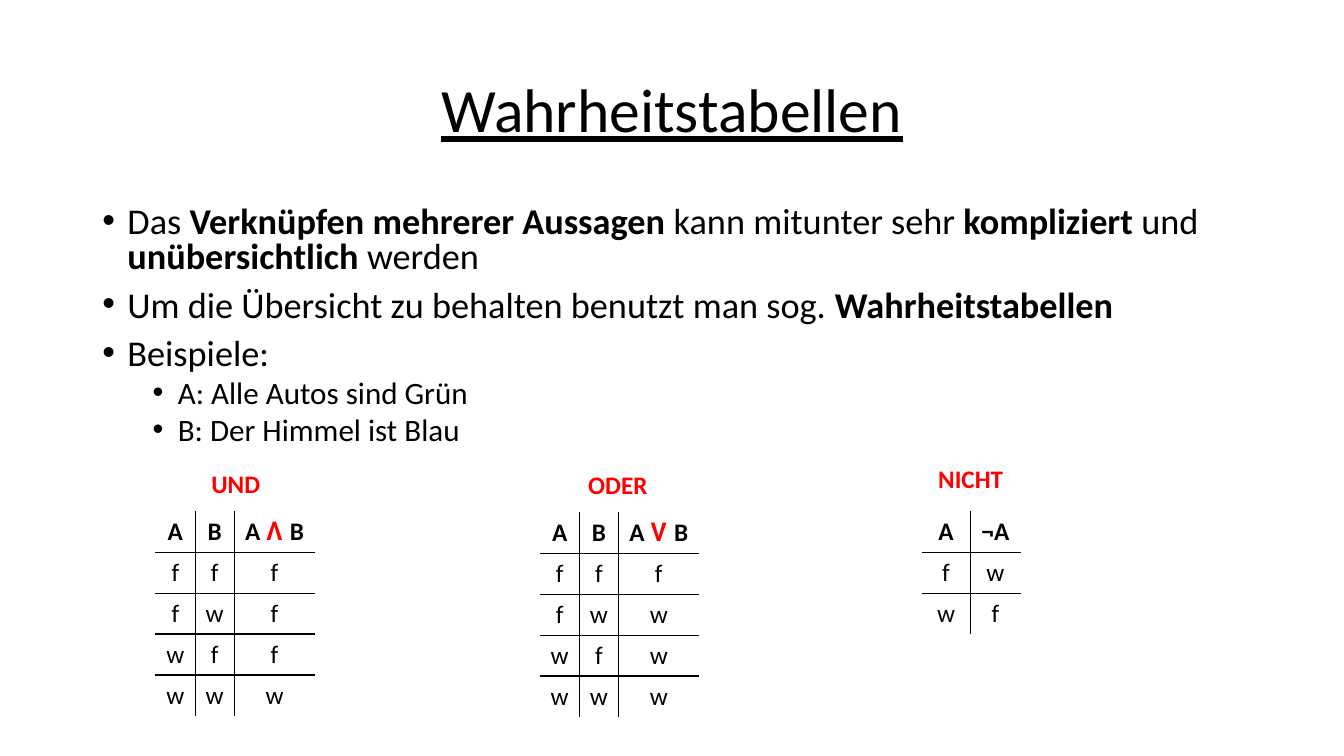
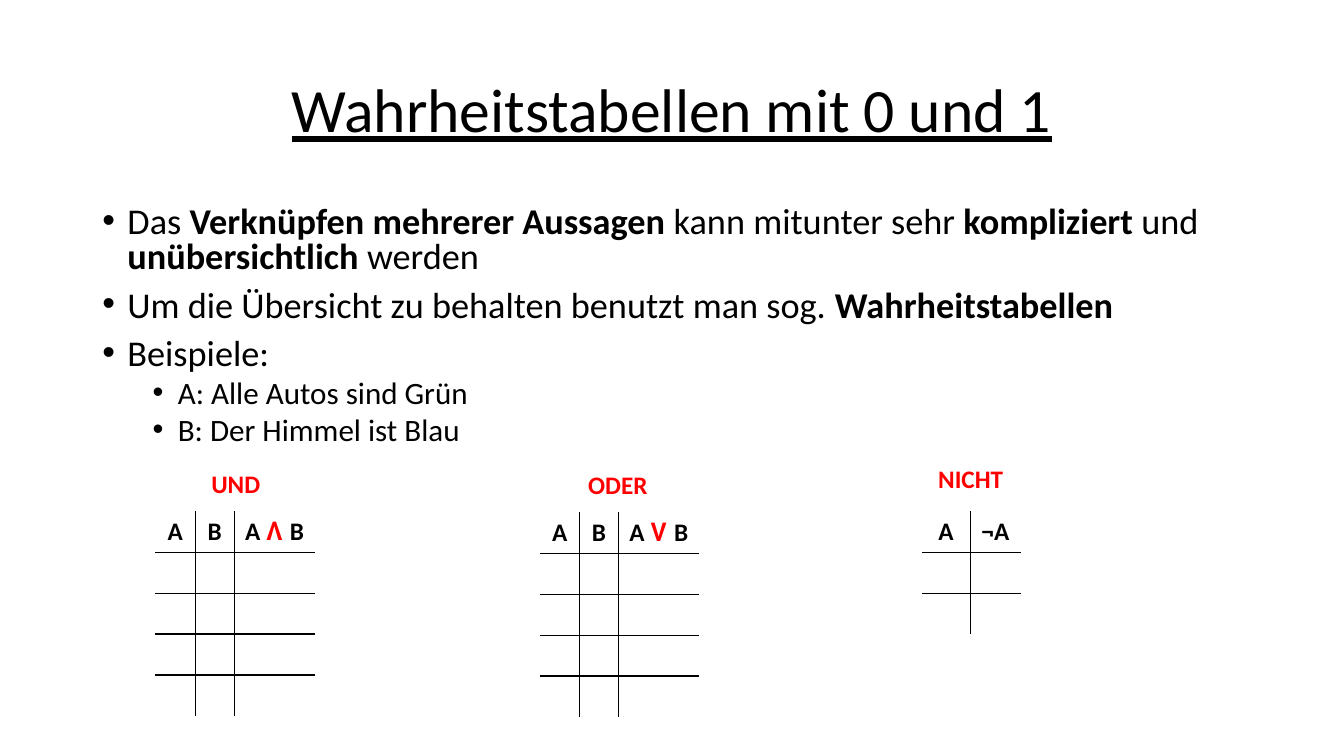
"""Build two slides on truth tables, one filled in and one left blank."""
from dataclasses import dataclass

from lxml import etree
from pptx import Presentation
from pptx.dml.color import RGBColor
from pptx.enum.text import MSO_ANCHOR, MSO_AUTO_SIZE, PP_ALIGN
from pptx.oxml.ns import qn
from pptx.util import Emu, Pt

PX = 9525
BLACK = RGBColor(0x00, 0x00, 0x00)
RED = RGBColor(0xFF, 0x00, 0x00)
FONT = "Calibri"
CENTER = PP_ALIGN.CENTER
MIDDLE = MSO_ANCHOR.MIDDLE
NO_FIT = MSO_AUTO_SIZE.NONE
TITLE_ONLY = 5
ROW_H = 39
LABEL_SIZE = (93, 32)
TABLE_PT = 18


@dataclass(frozen=True)
class Run:
    text: str
    bold: bool = False
    color: RGBColor = BLACK


@dataclass(frozen=True)
class Bullet:
    runs: tuple[Run, ...]
    size: float = 25.9
    indent: int = 24
    before: int = 10


@dataclass(frozen=True)
class TruthTable:
    label: str
    label_at: tuple[int, int]
    at: tuple[int, int]
    cols: tuple[int, ...]
    header: tuple[tuple[Run, ...], ...]
    rows: tuple[str, ...]


def head(text: str) -> tuple[Run, ...]:
    return (Run(text, True),)


def joined(operator: str) -> tuple[Run, ...]:
    return Run("A ", True), Run(operator, True, RED), Run(" B", True)


BULLETS = (
    Bullet((Run("Das "), Run("Verknüpfen mehrerer Aussagen ", True),
            Run("kann mitunter sehr "), Run("kompliziert", True), Run(" und "),
            Run("unübersichtlich", True), Run(" werden"))),
    Bullet((Run("Um die Übersicht zu behalten benutzt man sog. "),
            Run("Wahrheitstabellen", True))),
    Bullet((Run("Beispiele:"),)),
    Bullet((Run("A: Alle Autos sind Grün"),), 22.2, 72, 5),
    Bullet((Run("B: Der Himmel ist Blau"),), 22.2, 72, 5),
)
TABLES = (
    TruthTable("UND", (178, 444), (148, 487), (38, 37, 77),
               (head("A"), head("B"), joined("ꓥ")), ("fff", "fwf", "wff", "www")),
    TruthTable("ODER", (542, 445), (514, 488), (38, 37, 77),
               (head("A"), head("B"), joined("ꓦ")), ("fff", "fww", "wfw", "www")),
    TruthTable("NICHT", (878, 440), (878, 487), (46, 48),
               (head("A"), head("¬A")), ("fw", "wf")),
)


def px(n: int) -> Emu:
    return Emu(n * PX)


def place(sp, x: int, y: int, w: int, h: int) -> None:
    sp.left, sp.top, sp.width, sp.height = map(px, (x, y, w, h))


def write(p, runs: tuple[Run, ...], size: float, align=None, underline: bool = False) -> None:
    p.alignment = align
    for run in runs:
        r = p.add_run()
        r.text = run.text
        r.font.name, r.font.size = FONT, Pt(size)
        r.font.bold = run.bold
        r.font.underline = underline
        r.font.color.rgb = run.color


def add_box(s, x: int, y: int, w: int, h: int):
    tf = s.shapes.add_textbox(*map(px, (x, y, w, h))).text_frame
    tf.word_wrap = True
    tf.auto_size = NO_FIT
    return tf


def add_title(s, text: str) -> None:
    sp = s.shapes.title
    place(sp, 88, 38, 1104, 139)
    tf = sp.text_frame
    tf.vertical_anchor, tf.auto_size = MIDDLE, NO_FIT
    p = tf.paragraphs[0]
    p.line_spacing = 0.9
    write(p, (Run(text),), 44, CENTER, underline=True)


def add_bullets(s, bullets: tuple[Bullet, ...]) -> None:
    tf = add_box(s, 88, 192, 1104, 254)
    for i, bullet in enumerate(bullets):
        p = tf.add_paragraph() if i else tf.paragraphs[0]
        p.line_spacing, p.space_before = 0.8, Pt(bullet.before)
        write(p, bullet.runs, bullet.size)
        p_pr = p._p.get_or_add_pPr()
        p_pr.set("marL", str(px(bullet.indent)))
        p_pr.set("indent", str(px(-24)))
        etree.SubElement(p_pr, qn("a:buFont"), typeface="Arial")
        etree.SubElement(p_pr, qn("a:buChar"), char="•")


def set_border(cell, side: str, visible: bool) -> None:
    ln = etree.SubElement(cell._tc.get_or_add_tcPr(), qn(f"a:ln{side}"), w=str(Pt(1)))
    if visible:
        fill = etree.SubElement(ln, qn("a:solidFill"))
        etree.SubElement(fill, qn("a:srgbClr"), val=str(BLACK))
    else:
        etree.SubElement(ln, qn("a:noFill"))


def add_truth_table(s, spec: TruthTable, filled: bool) -> None:
    tf = add_box(s, *spec.label_at, *LABEL_SIZE)
    tf.vertical_anchor = MIDDLE
    write(tf.paragraphs[0], (Run(spec.label, True, RED),), TABLE_PT, CENTER)

    n_rows, n_cols = len(spec.rows) + 1, len(spec.cols)
    size = (sum(spec.cols), n_rows * ROW_H)
    table = s.shapes.add_table(n_rows, n_cols, *map(px, spec.at + size)).table
    table.first_row = table.horz_banding = False
    for col, width in zip(table.columns, spec.cols):
        col.width = px(width)
    values = [spec.header] + [tuple((Run(v),) for v in row) for row in spec.rows]
    for i, row in enumerate(values):
        table.rows[i].height = px(ROW_H)
        for j, runs in enumerate(row):
            cell = table.cell(i, j)
            cell.margin_left = cell.margin_right = 0
            cell.margin_top = cell.margin_bottom = 0
            cell.vertical_anchor = MIDDLE
            inner = {"L": j > 0, "R": j < n_cols - 1, "T": i > 0, "B": i < n_rows - 1}
            for side, visible in inner.items():
                set_border(cell, side, visible)
            cell.fill.background()
            if filled or i == 0:
                write(cell.text_frame.paragraphs[0], runs, TABLE_PT, CENTER)


def add_slide(prs, title: str, filled: bool) -> None:
    s = prs.slides.add_slide(prs.slide_layouts[TITLE_ONLY])
    add_title(s, title)
    add_bullets(s, BULLETS)
    for spec in TABLES:
        add_truth_table(s, spec, filled)


def main() -> None:
    prs = Presentation()
    prs.slide_width, prs.slide_height = px(1280), px(720)
    add_slide(prs, "Wahrheitstabellen", filled=True)
    add_slide(prs, "Wahrheitstabellen mit 0 und 1", filled=False)
    prs.save("out.pptx")


if __name__ == "__main__":
    main()
